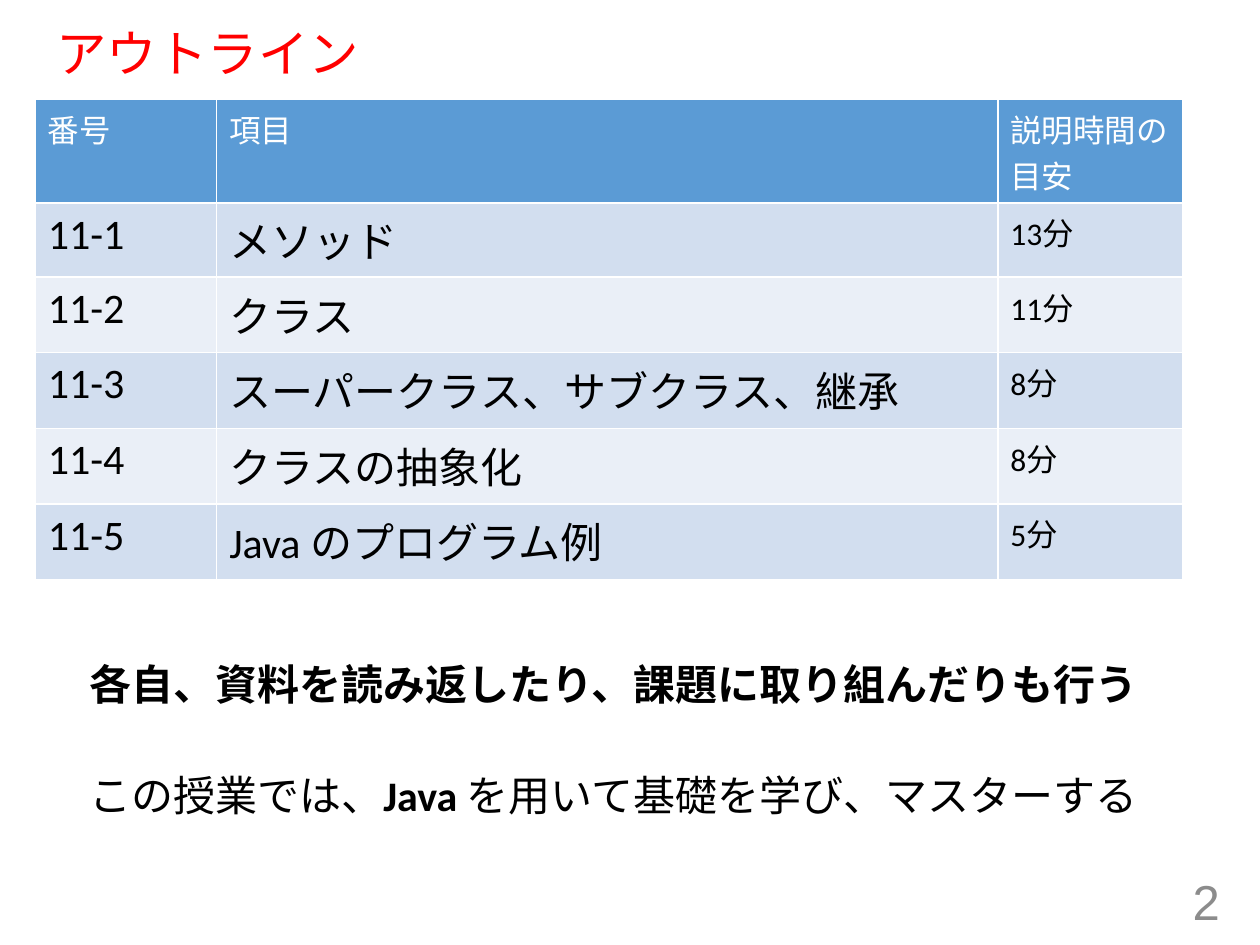
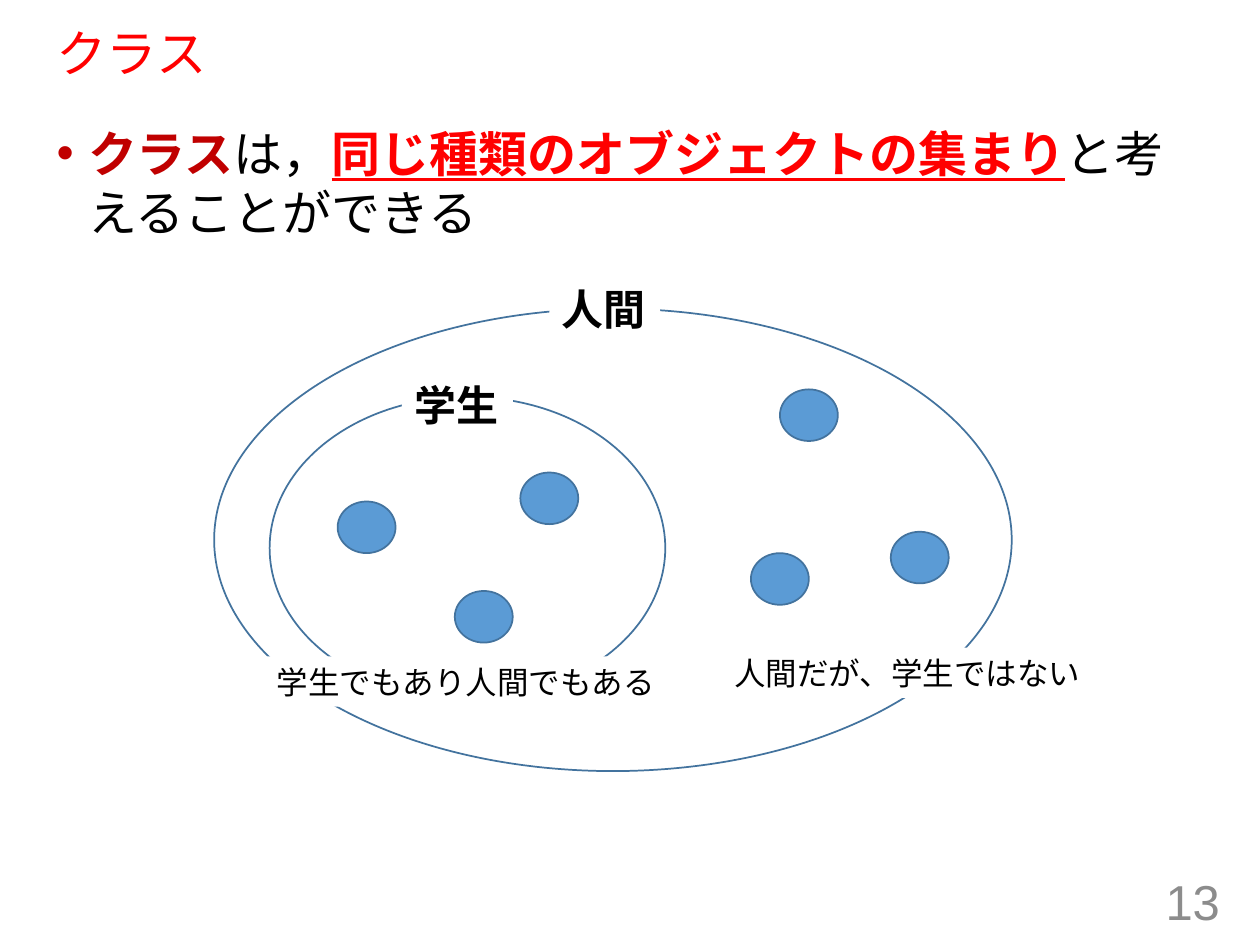
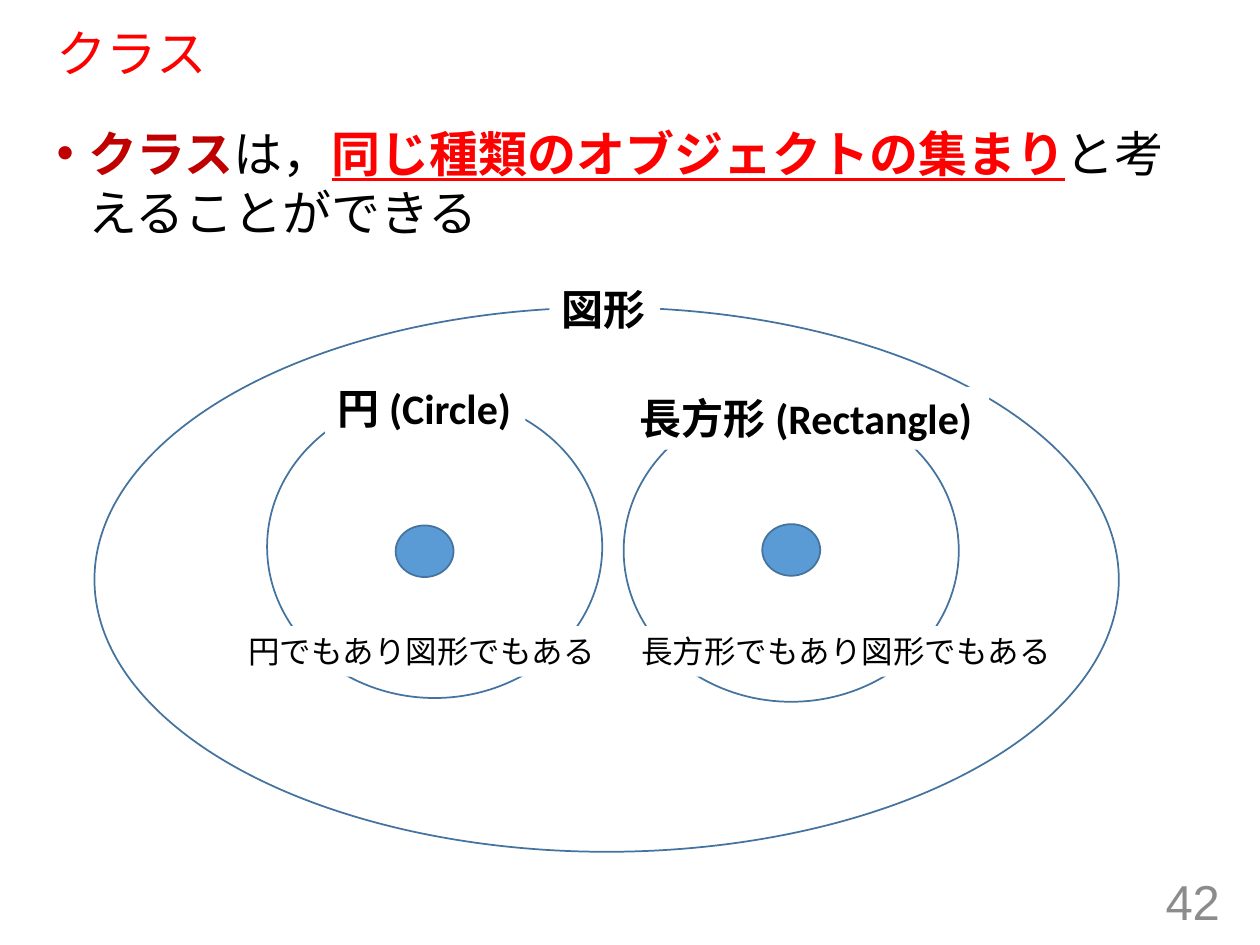
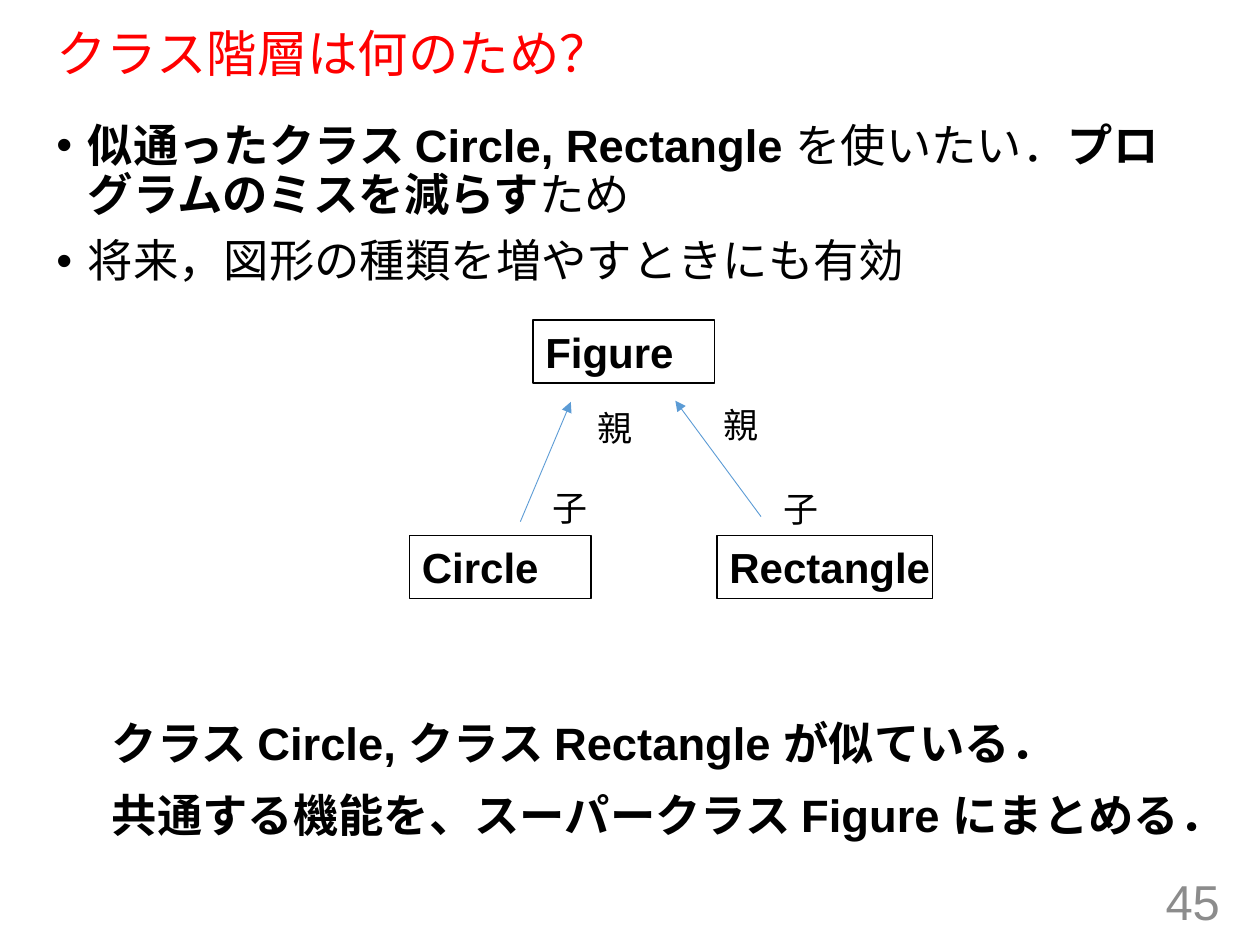
"""Build four lecture slides on Java classes and class hierarchies."""
from dataclasses import dataclass
from typing import NamedTuple

from lxml.etree import SubElement
from pptx import Presentation
from pptx.dml.color import RGBColor
from pptx.enum.shapes import MSO_CONNECTOR, MSO_SHAPE
from pptx.enum.text import MSO_ANCHOR, PP_ALIGN
from pptx.oxml.ns import qn
from pptx.util import Pt

PX = 9144
ARIAL = "Arial"
CALIBRI = "Calibri"

WHITE = RGBColor(0xFF, 0xFF, 0xFF)
BLACK = RGBColor(0x00, 0x00, 0x00)
RED = RGBColor(0xFF, 0x00, 0x00)
DARK_RED = RGBColor(0xC0, 0x00, 0x00)
GRAY = RGBColor(0x8C, 0x8C, 0x8C)
BLUE = RGBColor(0x5B, 0x9B, 0xD5)
OUTLINE_BLUE = RGBColor(0x43, 0x73, 0x9E)
DARK_BAND = RGBColor(0xD2, 0xDE, 0xEF)
LIGHT_BAND = RGBColor(0xEA, 0xEF, 0xF7)


class Box(NamedTuple):
    left: int
    top: int
    width: int
    height: int

    def emu(self) -> list[int]:
        return [length * PX for length in self]


class Span(NamedTuple):
    text: str
    bold: bool = False
    color: RGBColor = BLACK
    underline: bool = False


@dataclass(frozen=True)
class Style:
    size: float
    font: str = ARIAL
    line_spacing: float | None = None
    space_before: int = 0
    align: PP_ALIGN = PP_ALIGN.LEFT
    anchor: MSO_ANCHOR = MSO_ANCHOR.TOP
    bullet: bool = False
    wrap: bool = True


class Label(NamedTuple):
    box: Box
    text: str
    heading: bool = False


@dataclass(frozen=True)
class ClassDiagram:
    page: int
    members: list[tuple[int, int]]
    sets: list[Box]
    labels: list[Label]


class Relation(NamedTuple):
    child_end: tuple[int, int]
    parent_end: tuple[int, int]
    child_mark: tuple[int, int]
    parent_mark: tuple[int, int]


TITLE = Style(28.8, line_spacing=0.9, anchor=MSO_ANCHOR.MIDDLE)
PAGE_NUMBER = Style(28, align=PP_ALIGN.RIGHT, anchor=MSO_ANCHOR.MIDDLE)
BULLETS = Style(28, space_before=10, bullet=True)
TIGHT_BULLETS = Style(25.9, line_spacing=0.9, space_before=10, bullet=True)
SUMMARY = Style(25.9, space_before=10)
HEADING = Style(24, CALIBRI)
CAPTION = Style(18, CALIBRI)
CLASS_NAME = Style(24, wrap=False)
ROLE = Style(20, wrap=False)

TITLE_BOX = Box(35, 19, 925, 51)
PAGE_BOX = Box(753, 695, 225, 40)
MEMBER_SIZE = (46, 41)
ROLE_SIZE = (48, 44)

OUTLINE_COLUMNS = [144, 620, 147]
OUTLINE_ROWS = [82, 59, 60, 60, 60, 60]
OUTLINE_BOX = Box(28, 79, sum(OUTLINE_COLUMNS), sum(OUTLINE_ROWS))
OUTLINE = [
    ("番号", "項目", "説明時間の目安"),
    ("11-1", "メソッド", "13分"),
    ("11-2", "クラス", "11分"),
    ("11-3", "スーパークラス、サブクラス、継承", "8分"),
    ("11-4", "クラスの抽象化", "8分"),
    ("11-5", "Java のプログラム例", "5分"),
]

DEFINITION = [
    Span("クラス", True, DARK_RED),
    Span("は，"),
    Span("同じ種類のオブジェクトの集まり", True, RED, True),
    Span("と考えることができる"),
]

PEOPLE = ClassDiagram(
    page=13,
    members=[(268, 398), (361, 469), (413, 375), (619, 309), (707, 422), (596, 439)],
    sets=[Box(214, 315, 314, 240), Box(170, 245, 633, 367)],
    labels=[
        Label(Box(436, 220, 88, 50), "人間", True),
        Label(Box(319, 296, 88, 50), "学生", True),
        Label(Box(210, 521, 323, 40), "学生でもあり人間でもある"),
        Label(Box(573, 514, 298, 40), "人間だが、学生ではない"),
    ],
)
FIGURES = ClassDiagram(
    page=42,
    members=[(314, 417), (605, 416)],
    sets=[Box(212, 314, 266, 240), Box(75, 244, 813, 432), Box(495, 317, 266, 240)],
    labels=[
        Label(Box(436, 220, 88, 50), "図形", True),
        Label(Box(258, 299, 159, 50), "円 (Circle)", True),
        Label(Box(187, 497, 298, 40), "円でもあり図形でもある"),
        Label(Box(498, 307, 287, 50), "長方形 (Rectangle)", True),
        Label(Box(499, 497, 348, 40), "長方形でもあり図形でもある"),
    ],
)

CLASSES = [
    (Box(423, 254, 144, 50), "Figure"),
    (Box(325, 425, 144, 50), "Circle"),
    (Box(569, 425, 171, 50), "Rectangle"),
]
RELATIONS = [
    Relation((413, 414), (453, 319), (429, 381), (464, 318)),
    Relation((604, 410), (536, 318), (612, 382), (564, 315)),
]


def write(frame, paragraphs: list[list[Span]], style: Style) -> None:
    frame.word_wrap = style.wrap
    frame.vertical_anchor = style.anchor
    for index, spans in enumerate(paragraphs):
        paragraph = frame.add_paragraph() if index else frame.paragraphs[0]
        paragraph.alignment = style.align
        paragraph.space_before = Pt(style.space_before)
        if style.line_spacing:
            paragraph.line_spacing = style.line_spacing
        if style.bullet:
            properties = paragraph._p.get_or_add_pPr()
            properties.set("marL", str(25 * PX))
            properties.set("indent", str(-25 * PX))
            SubElement(properties, qn("a:buFont"), typeface=ARIAL)
            SubElement(properties, qn("a:buChar"), char="•")
        for span in spans:
            run = paragraph.add_run()
            run.text = span.text
            run.font.size = Pt(style.size)
            run.font.name = style.font
            run.font.bold = span.bold
            run.font.underline = span.underline
            run.font.color.rgb = span.color


def add_text(slide, box: Box, paragraphs: list[list[Span]], style: Style) -> None:
    write(slide.shapes.add_textbox(*box.emu()).text_frame, paragraphs, style)


def add_figure(slide, kind: MSO_SHAPE, box: Box, fill: RGBColor | None,
               line: RGBColor | None, line_width: float = 1):
    figure = slide.shapes.add_shape(kind, *box.emu())
    figure.shadow.inherit = False
    if fill is None:
        figure.fill.background()
    else:
        figure.fill.solid()
        figure.fill.fore_color.rgb = fill
    if line is None:
        figure.line.fill.background()
    else:
        figure.line.color.rgb = line
        figure.line.width = Pt(line_width)
    return figure


def add_arrow(slide, start: tuple[int, int], end: tuple[int, int]) -> None:
    ends = [length * PX for length in (*start, *end)]
    arrow = slide.shapes.add_connector(MSO_CONNECTOR.STRAIGHT, *ends)
    arrow.line.color.rgb = BLUE
    arrow.line.width = Pt(0.5)
    SubElement(arrow.line._get_or_add_ln(), qn("a:tailEnd"), type="triangle")
    SubElement(arrow._element.spPr, qn("a:effectLst"))


def set_borders(cell) -> None:
    properties = cell._tc.get_or_add_tcPr()
    for position, edge in enumerate(("a:lnL", "a:lnR", "a:lnT", "a:lnB")):
        border = SubElement(properties, qn(edge), w=str(Pt(1)))
        SubElement(SubElement(border, qn("a:solidFill")), qn("a:srgbClr"), val=str(WHITE))
        properties.insert(position, border)


def add_outline(slide) -> None:
    table = slide.shapes.add_table(
        len(OUTLINE), len(OUTLINE_COLUMNS), *OUTLINE_BOX.emu()).table
    for column, width in zip(table.columns, OUTLINE_COLUMNS):
        column.width = width * PX
    for row, height in zip(table.rows, OUTLINE_ROWS):
        row.height = height * PX
    for row_index, entries in enumerate(OUTLINE):
        is_header = row_index == 0
        band = BLUE if is_header else DARK_BAND if row_index % 2 else LIGHT_BAND
        for column_index, entry in enumerate(entries):
            cell = table.cell(row_index, column_index)
            cell.fill.solid()
            cell.fill.fore_color.rgb = band
            set_borders(cell)
            style = CAPTION if is_header or column_index == 2 else HEADING
            write(cell.text_frame, [[Span(entry, color=WHITE if is_header else BLACK)]], style)


def add_page(deck, title: str, page: int):
    slide = deck.slides.add_slide(deck.slide_layouts[6])
    add_text(slide, TITLE_BOX, [[Span(title, color=RED)]], TITLE)
    add_text(slide, PAGE_BOX, [[Span(str(page), color=GRAY)]], PAGE_NUMBER)
    return slide


def add_outline_page(deck) -> None:
    slide = add_page(deck, "アウトライン", 2)
    add_outline(slide)
    add_text(slide, Box(61, 518, 862, 50),
             [[Span("各自、資料を読み返したり、課題に取り組んだりも行う", True)]], HEADING)
    add_text(slide, Box(61, 606, 859, 50),
             [[Span("この授業では、"), Span("Java ", True),
               Span("を用いて基礎を学び、マスターする")]], HEADING)


def add_class_page(deck, diagram: ClassDiagram) -> None:
    slide = add_page(deck, "クラス", diagram.page)
    add_text(slide, Box(35, 93, 925, 583), [DEFINITION], BULLETS)
    for corner in diagram.members:
        add_figure(slide, MSO_SHAPE.OVAL, Box(*corner, *MEMBER_SIZE), BLUE, OUTLINE_BLUE)
    for boundary in diagram.sets:
        add_figure(slide, MSO_SHAPE.OVAL, boundary, None, OUTLINE_BLUE)
    for label in diagram.labels:
        plate = add_figure(slide, MSO_SHAPE.RECTANGLE, label.box, WHITE, None)
        write(plate.text_frame, [[Span(label.text, label.heading)]],
              HEADING if label.heading else CAPTION)


def add_hierarchy_page(deck) -> None:
    slide = add_page(deck, "クラス階層は何のため？　", 45)
    add_text(slide, Box(35, 93, 913, 147), [
        [Span("似通ったクラス Circle, Rectangle ", True), Span("を使いたい．"),
         Span("プログラムのミスを減らす", True), Span("ため")],
        [Span("将来，図形の種類を増やすときにも有効")],
    ], TIGHT_BULLETS)
    for box, class_name in CLASSES:
        frame = add_figure(slide, MSO_SHAPE.RECTANGLE, box, None, BLACK, 0.75)
        write(frame.text_frame, [[Span(class_name, True)]], CLASS_NAME)
    for relation in RELATIONS:
        add_arrow(slide, relation.child_end, relation.parent_end)
        add_text(slide, Box(*relation.parent_mark, *ROLE_SIZE), [[Span("親")]], ROLE)
        add_text(slide, Box(*relation.child_mark, *ROLE_SIZE), [[Span("子")]], ROLE)
    add_text(slide, Box(79, 563, 913, 132), [
        [Span("クラス Circle, クラス Rectangle が似ている．", True)],
        [Span("共通する機能を、スーパークラス Figure にまとめる．", True)],
    ], SUMMARY)


def main() -> None:
    deck = Presentation()
    deck.slide_width = 1000 * PX
    deck.slide_height = 750 * PX
    add_outline_page(deck)
    add_class_page(deck, PEOPLE)
    add_class_page(deck, FIGURES)
    add_hierarchy_page(deck)
    deck.save("out.pptx")


if __name__ == "__main__":
    main()
